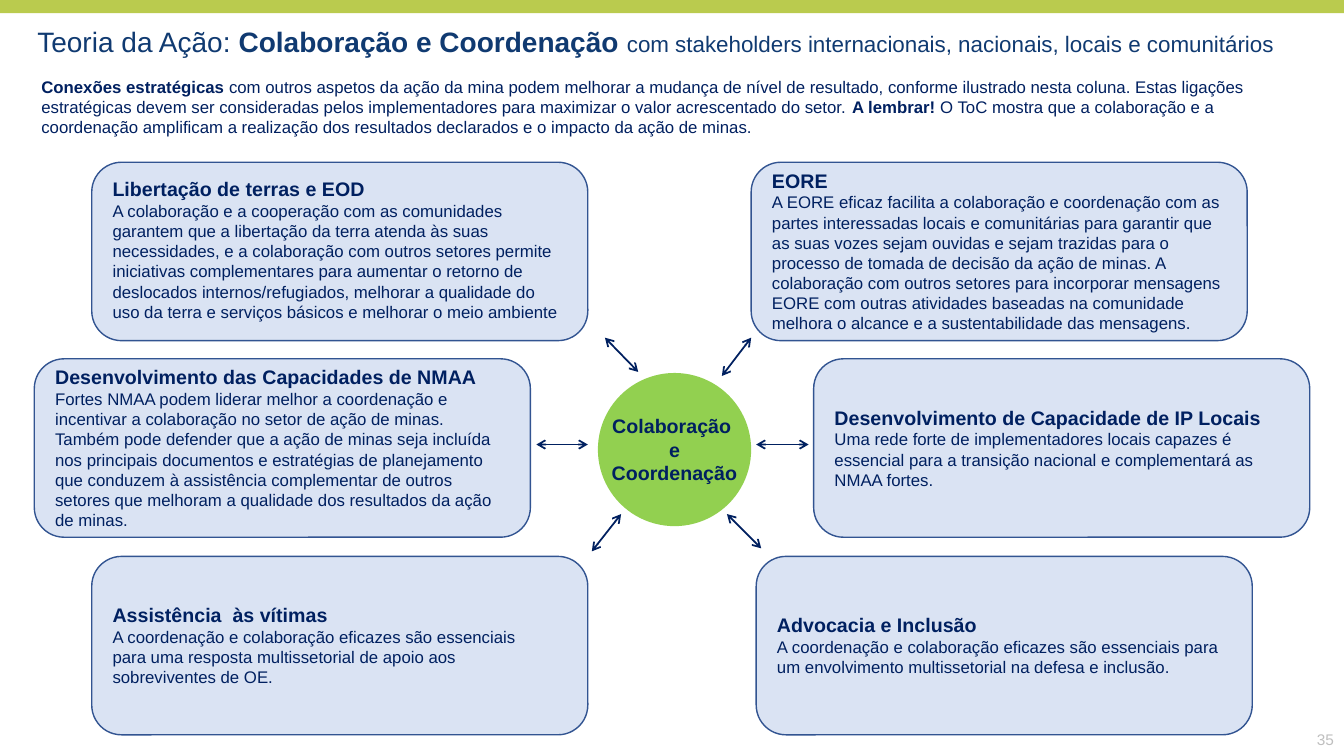
from dataclasses import dataclass

from lxml.etree import SubElement
from pptx import Presentation
from pptx.dml.color import RGBColor
from pptx.enum.shapes import MSO_CONNECTOR, MSO_SHAPE
from pptx.enum.text import MSO_ANCHOR, MSO_AUTO_SIZE, PP_ALIGN
from pptx.oxml.ns import qn
from pptx.util import Inches, Pt


@dataclass(frozen=True)
class Theme:
    font: str = "Arial"
    navy: str = "002060"
    title: str = "103A71"
    box: str = "DAE3F3"
    edge: str = "325491"
    green: str = "92D050"
    band: str = "BACB4E"
    gray: str = "BFBFBF"
    big: int = 20
    mid: int = 16
    head: int = 14
    body: int = 12
    small: int = 11


THEME = Theme()
BOX_W, BOX_H = 4.92, 1.77
ROWS = (1.61, 3.56, 5.52)
PAD = (0.12, 0.04, 0.1, 0.05)

# left, row, padding, space after the body, heading, body
CARDS = [
    (0.91, 0, (0.12, 0, 0.12, 0.04), 0, "Libertação de terras e EOD",
     "A colaboração e a cooperação com as comunidades garantem que a "
     "libertação da terra atenda às suas necessidades, e a colaboração com "
     "outros setores permite iniciativas complementares para aumentar o "
     "retorno de deslocados internos/refugiados, melhorar a qualidade do uso "
     "da terra e serviços básicos e melhorar o meio ambiente"),
    (7.45, 0, PAD, 0, "EORE",
     "A EORE eficaz facilita a colaboração e coordenação com as partes "
     "interessadas locais e comunitárias para garantir que as suas vozes "
     "sejam ouvidas e sejam trazidas para o processo de tomada de decisão da "
     "ação de minas. A colaboração com outros setores para incorporar "
     "mensagens EORE com outras atividades baseadas na comunidade melhora o "
     "alcance e a sustentabilidade das mensagens."),
    (0.34, 1, PAD, 0, "Desenvolvimento das Capacidades de NMAA",
     "Fortes NMAA podem liderar melhor a coordenação e incentivar a "
     "colaboração no setor de ação de minas. Também pode defender que a ação "
     "de minas seja incluída nos principais documentos e estratégias de "
     "planejamento que conduzem à assistência complementar de outros setores "
     "que melhoram a qualidade dos resultados da ação de minas."),
    (8.07, 1, PAD, 0, "Desenvolvimento de Capacidade de IP Locais",
     "Uma rede forte de implementadores locais capazes é essencial para a "
     "transição nacional e complementará as NMAA fortes."),
    (7.5, 2, PAD, 3, "Advocacia e Inclusão",
     "A coordenação e colaboração eficazes são essenciais para um "
     "envolvimento multissetorial na defesa e inclusão."),
    (0.91, 2, (0.12, 0.04, 0.28, 0.05), 0, "Assistência  às vítimas",
     "A coordenação e colaboração eficazes são essenciais para uma resposta "
     "multissetorial de apoio aos sobreviventes de OE."),
]

ARROWS = [
    (6, 3.35, 6.33, 3.69),
    (7.45, 3.35, 7.16, 3.73),
    (5.32, 4.41, 5.83, 4.41),
    (7.5, 4.41, 8.02, 4.41),
    (6.16, 5.1, 5.87, 5.47),
    (7.21, 5.1, 7.55, 5.44),
]


def color(code):
    return RGBColor.from_string(code)


def add_run(para, text, size, bold=False, tint=THEME.navy):
    run = para.add_run()
    run.text = text
    font = run.font
    font.name, font.size, font.bold = THEME.font, Pt(size), bold
    font.color.rgb = color(tint)


def set_frame(shape, pad, anchor=MSO_ANCHOR.TOP, wrap=True):
    frame = shape.text_frame
    frame.word_wrap = wrap
    frame.vertical_anchor = anchor
    (frame.margin_left, frame.margin_top,
     frame.margin_right, frame.margin_bottom) = map(Inches, pad)
    return frame


def add_text(slide, area, pad, anchor=MSO_ANCHOR.TOP):
    """Add a text box and return its frame."""
    return set_frame(slide.shapes.add_textbox(*map(Inches, area)), pad, anchor)


def add_form(slide, kind, area, fill, edge=None):
    """Add a filled preset shape, with a line only if edge is given."""
    form = slide.shapes.add_shape(kind, *map(Inches, area))
    form.shadow.inherit = False
    form.fill.solid()
    form.fill.fore_color.rgb = color(fill)
    if edge:
        form.line.color.rgb = color(edge)
        form.line.width = Pt(1)
    else:
        form.line.fill.background()
    return form


def add_card(slide, left, row, pad, after, head, body):
    form = add_form(slide, MSO_SHAPE.ROUNDED_RECTANGLE,
                    (left, ROWS[row], BOX_W, BOX_H), THEME.box, THEME.edge)
    frame = set_frame(form, pad, MSO_ANCHOR.MIDDLE)
    top, para = frame.paragraphs[0], frame.add_paragraph()
    add_run(top, head, THEME.head, True)
    add_run(para, body, THEME.body)
    para.space_after = Pt(after)
    for item in (top, para):
        item.alignment = PP_ALIGN.LEFT


def add_arrow(slide, *ends):
    """Add a line with an open arrowhead at both ends."""
    arrow = slide.shapes.add_connector(MSO_CONNECTOR.STRAIGHT,
                                       *map(Inches, ends))
    arrow.line.color.rgb = color(THEME.navy)
    arrow.line.width = Pt(1.25)
    line = arrow.line._get_or_add_ln()
    for tag in ("a:headEnd", "a:tailEnd"):
        SubElement(line, qn(tag), type="arrow")
    SubElement(arrow._element.spPr, qn("a:effectLst"))


def add_hub(slide):
    hub = add_form(slide, MSO_SHAPE.FLOWCHART_CONNECTOR,
                   (5.93, 3.7, 1.52, 1.52), THEME.green)
    frame = set_frame(hub, (0, 0.05, 0, 0.05), MSO_ANCHOR.MIDDLE, False)
    para = frame.paragraphs[0]
    para.alignment = PP_ALIGN.CENTER
    for spot, word in enumerate(("Colaboração ", "e", "Coordenação")):
        if spot:
            para.add_line_break()
        add_run(para, word, THEME.head, True)


def add_title(slide):
    frame = add_text(slide, (0.37, 0.24, 12.52, 0.34), (0, 0, 0, 0))
    frame.auto_size = MSO_AUTO_SIZE.SHAPE_TO_FIT_TEXT
    para = frame.paragraphs[0]
    add_run(para, "Teoria da Ação: ", THEME.big, False, THEME.title)
    add_run(para, "Colaboração e Coordenação ", THEME.big, True, THEME.title)
    add_run(para, "com stakeholders internacionais, nacionais, locais e "
            "comunitários", THEME.mid, False, THEME.title)


def add_intro(slide):
    frame = add_text(slide, (0.41, 0.71, 12.52, 1.11), (0, 0.05, 0.1, 0.05))
    para = frame.paragraphs[0]
    add_run(para, "Conexões estratégicas ", THEME.body, True)
    add_run(para, "com outros aspetos da ação da mina podem melhorar a mudança "
            "de nível de resultado, conforme ilustrado nesta coluna. Estas "
            "ligações estratégicas devem ser consideradas pelos "
            "implementadores para maximizar o valor acrescentado do setor. ",
            THEME.body)
    add_run(para, "A lembrar!", THEME.body, True)
    add_run(para, " O ToC mostra que a colaboração e a coordenação amplificam "
            "a realização dos resultados declarados e o impacto da ação de "
            "minas.", THEME.body)


def add_number(slide):
    frame = add_text(slide, (12.87, 7.17, 0.46, 0.33),
                     (0.1, 0.05, 0.1, 0.05), MSO_ANCHOR.MIDDLE)
    para = frame.paragraphs[0]
    para.alignment = PP_ALIGN.RIGHT
    add_run(para, "35", THEME.small, False, THEME.gray)


def main():
    deck = Presentation()
    deck.slide_width, deck.slide_height = Inches(13.33), Inches(7.5)
    slide = deck.slides.add_slide(deck.slide_layouts[6])
    add_form(slide, MSO_SHAPE.RECTANGLE, (0, 0, 13.33, 0.13), THEME.band)
    add_title(slide)
    add_intro(slide)
    for card in CARDS:
        add_card(slide, *card)
    for ends in ARROWS:
        add_arrow(slide, *ends)
    add_hub(slide)
    add_number(slide)
    deck.save("out.pptx")


if __name__ == "__main__":
    main()
